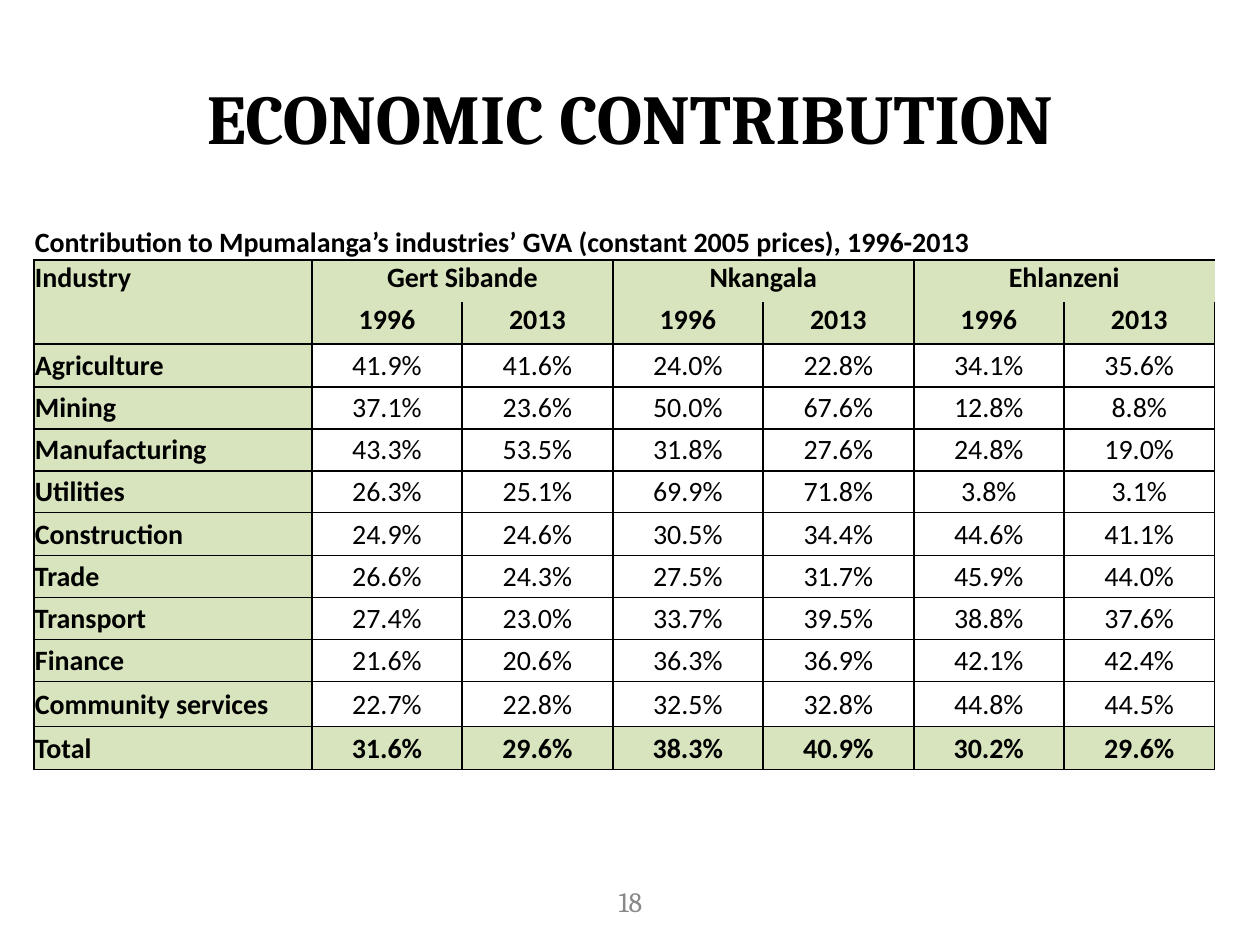
from dataclasses import dataclass

from lxml.etree import SubElement
from pptx import Presentation
from pptx.dml.color import RGBColor
from pptx.enum.text import MSO_ANCHOR, PP_ALIGN
from pptx.oxml.ns import qn
from pptx.util import Pt

EMU_PER_PX = 914400 // 126
BLACK = RGBColor(0x00, 0x00, 0x00)
WHITE = RGBColor(0xFF, 0xFF, 0xFF)
GREEN = RGBColor(0xD7, 0xE4, 0xBD)
GREY = RGBColor(0x89, 0x89, 0x89)

CAPTION = "Contribution to Mpumalanga’s industries’ GVA (constant 2005 prices), 1996-2013"
DISTRICTS = ("Gert Sibande", "Nkangala", "Ehlanzeni")
YEARS = ("1996", "2013")
COLUMN_WIDTHS = (278,) + (150, 151) * 3
ROW_HEIGHTS = (36, 42, 42, 43, 42, 42, 42, 43, 42, 42, 42, 45, 43)


@dataclass(frozen=True)
class Industry:
    """One table row: an industry and its shares by district and year."""
    name: str
    shares: tuple[float, ...]
    total: bool = False


INDUSTRIES = (
    Industry("Agriculture", (41.9, 41.6, 24.0, 22.8, 34.1, 35.6)),
    Industry("Mining", (37.1, 23.6, 50.0, 67.6, 12.8, 8.8)),
    Industry("Manufacturing", (43.3, 53.5, 31.8, 27.6, 24.8, 19.0)),
    Industry("Utilities", (26.3, 25.1, 69.9, 71.8, 3.8, 3.1)),
    Industry("Construction", (24.9, 24.6, 30.5, 34.4, 44.6, 41.1)),
    Industry("Trade", (26.6, 24.3, 27.5, 31.7, 45.9, 44.0)),
    Industry("Transport", (27.4, 23.0, 33.7, 39.5, 38.8, 37.6)),
    Industry("Finance", (21.6, 20.6, 36.3, 36.9, 42.1, 42.4)),
    Industry("Community services", (22.7, 22.8, 32.5, 32.8, 44.8, 44.5)),
    Industry("Total", (31.6, 29.6, 38.3, 40.9, 30.2, 29.6), total=True),
)


def px(length: int) -> int:
    """Turn pixels into EMU."""
    return length * EMU_PER_PX


def style_paragraph(paragraph, size: int, font: str, color: RGBColor,
                    bold: bool = False, align=PP_ALIGN.CENTER) -> None:
    """Set the alignment and font of a paragraph."""
    paragraph.alignment = align
    paragraph.font.size = Pt(size)
    paragraph.font.name = font
    paragraph.font.bold = bold
    paragraph.font.color.rgb = color


def set_borders(cell, colors: dict[str, RGBColor]) -> None:
    """Draw the four sides of a cell, leaving out the sides without a colour."""
    properties = cell._tc.get_or_add_tcPr()
    for side in "LRTB":
        line = SubElement(properties, qn(f"a:ln{side}"), w=str(Pt(1)))
        if side in colors:
            fill = SubElement(line, qn("a:solidFill"))
            SubElement(fill, qn("a:srgbClr"), val=str(colors[side]))
        else:
            SubElement(line, qn("a:noFill"))


def border_colors(row: int, column: int) -> dict[str, RGBColor]:
    """Give the visible sides of the cell at a row and column."""
    if row == 0:
        return dict(L=WHITE, T=WHITE, R=WHITE, B=BLACK)
    sides = "LRTB"
    if row == 1:
        sides = "LRT" if column == 0 else "LT" if column % 2 else "RT"
    elif row == 2:
        sides = "LRB"
    return {side: BLACK for side in sides}


def style_cell(cell, row: int, column: int) -> None:
    """Set the margins, borders, fill and text style of a table cell."""
    cell.margin_left = cell.margin_right = cell.margin_top = px(1)
    cell.margin_bottom = 0
    if row == 0:
        cell.vertical_anchor = MSO_ANCHOR.BOTTOM
    else:
        cell.vertical_anchor = MSO_ANCHOR.TOP if row < 3 else MSO_ANCHOR.MIDDLE
    set_borders(cell, border_colors(row, column))
    heading = column == 0 or row < 3 or INDUSTRIES[row - 3].total
    if heading and row > 0:
        cell.fill.solid()
        cell.fill.fore_color.rgb = GREEN
    else:
        cell.fill.background()
    align = PP_ALIGN.CENTER if column else PP_ALIGN.LEFT
    style_paragraph(cell.text_frame.paragraphs[0], 16, "Calibri", BLACK, heading, align)


def fill_headings(table) -> None:
    """Write and merge the caption, industry and district headings."""
    table.cell(0, 0).text = CAPTION
    table.cell(0, 0).merge(table.cell(0, len(COLUMN_WIDTHS) - 1))
    table.cell(1, 0).text = "Industry"
    table.cell(1, 0).merge(table.cell(2, 0))
    for index, district in enumerate(DISTRICTS):
        first = 1 + index * len(YEARS)
        table.cell(1, first).text = district
        table.cell(1, first).merge(table.cell(1, first + 1))
        for offset, year in enumerate(YEARS):
            table.cell(2, first + offset).text = year


def add_contribution_table(page) -> None:
    """Add the table of industry shares."""
    frame = page.shapes.add_table(len(ROW_HEIGHTS), len(COLUMN_WIDTHS), px(34), px(224),
                                  px(sum(COLUMN_WIDTHS)), px(sum(ROW_HEIGHTS)))
    table = frame.table
    table.first_row = table.horz_banding = False
    for column, width in zip(table.columns, COLUMN_WIDTHS):
        column.width = px(width)
    for row, height in zip(table.rows, ROW_HEIGHTS):
        row.height = px(height)
    fill_headings(table)
    for row, industry in enumerate(INDUSTRIES, start=3):
        table.cell(row, 0).text = industry.name
        for column, share in enumerate(industry.shares, start=1):
            table.cell(row, column).text = f"{share:.1f}%"
    for row in range(len(ROW_HEIGHTS)):
        for column in range(len(COLUMN_WIDTHS)):
            style_cell(table.cell(row, column), row, column)


def add_title(page) -> None:
    """Fill and place the title placeholder."""
    title = page.shapes.title
    title.left, title.top, title.width, title.height = px(63), px(38), px(1134), px(158)
    title.text_frame.text = "ECONOMIC CONTRIBUTION"
    title.text_frame.vertical_anchor = MSO_ANCHOR.MIDDLE
    style_paragraph(title.text_frame.paragraphs[0], 40, "Cambria", BLACK, bold=True)


def add_page_number(page) -> None:
    """Add the page number at the foot of the slide."""
    box = page.shapes.add_textbox(px(431), px(876), px(399), px(50))
    box.text_frame.word_wrap = True
    box.text_frame.vertical_anchor = MSO_ANCHOR.MIDDLE
    box.text_frame.text = "18"
    style_paragraph(box.text_frame.paragraphs[0], 16, "Cambria", GREY)


def main() -> None:
    """Build and save the slide."""
    deck = Presentation()
    deck.slide_width, deck.slide_height = px(1260), px(945)
    page = deck.slides.add_slide(deck.slide_layouts[5])
    add_title(page)
    add_contribution_table(page)
    add_page_number(page)
    deck.save("out.pptx")


if __name__ == "__main__":
    main()
